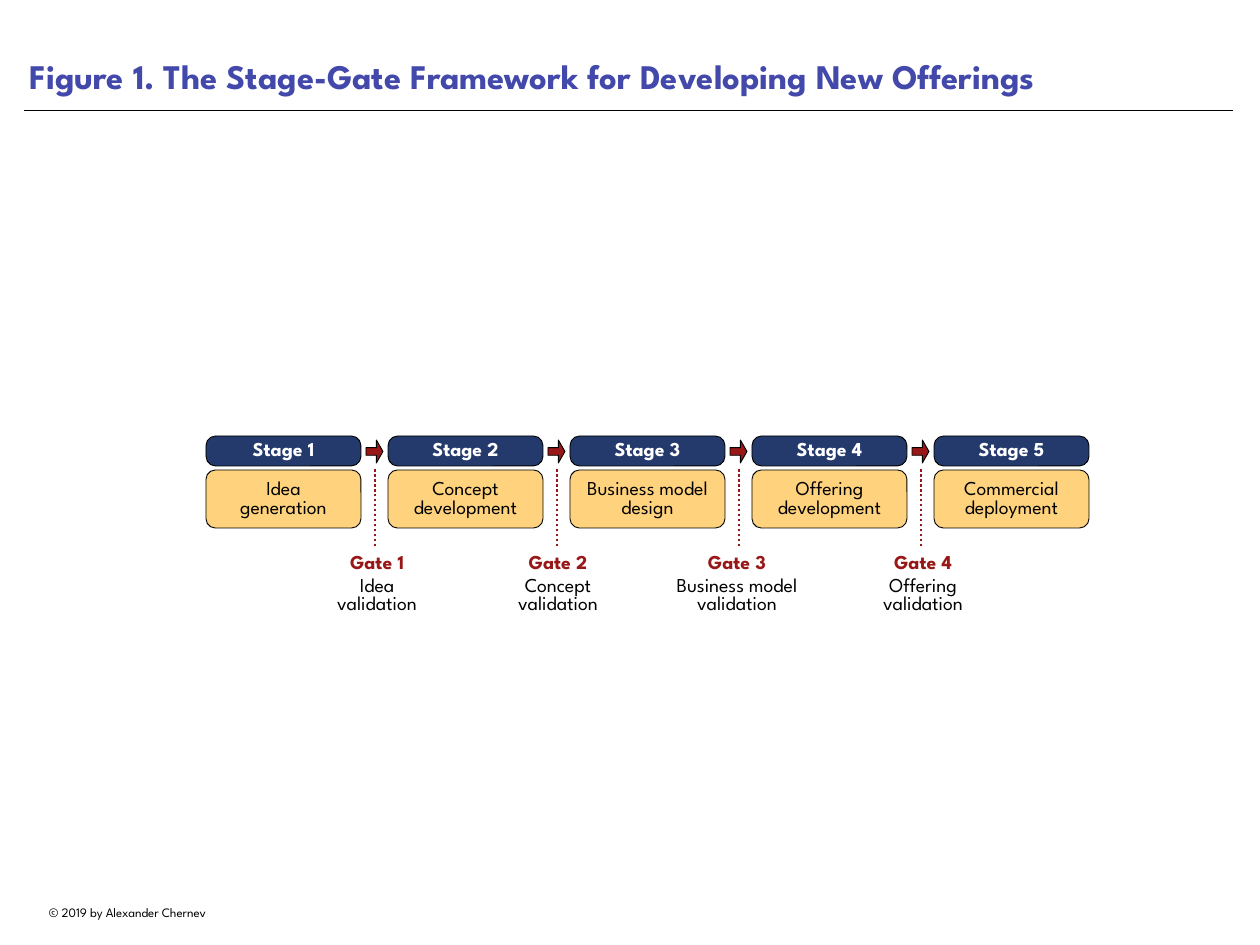
from pptx import Presentation
from pptx.dml.color import RGBColor
from pptx.enum.dml import MSO_LINE
from pptx.enum.shapes import MSO_CONNECTOR, MSO_SHAPE
from pptx.enum.text import MSO_ANCHOR, PP_ALIGN
from pptx.oxml.ns import qn
from pptx.util import Emu, Pt

TITLE = "Figure 1. The Stage-Gate Framework for Developing New Offerings"
CREDIT = "© 2019 by Alexander Chernev"
STAGES = [
    ("Stage 1", "Idea\ngeneration"),
    ("Stage 2", "Concept development"),
    ("Stage 3", "Business model design"),
    ("Stage 4", "Offering development"),
    ("Stage 5", "Commercial deployment"),
]
GATES = [
    ("Gate 1", "Idea validation", 377, 110),
    ("Gate 2", "Concept validation", 558, 110),
    ("Gate 3", "Business model validation", 737, 150),
    ("Gate 4", "Offering validation", 923, 110),
]
COLORS = {
    "title": "4349AA",
    "stage": "253A6C",
    "task": "FFD37D",
    "gate": "971817",
    "black": "000000",
    "white": "FFFFFF",
}
FONT = "League Spartan"
PX = 10320
LEFT, PITCH, STAGE_W = 206, 182, 155


def px(*values):
    return [Emu(v * PX) for v in values]


def color(name):
    return RGBColor.from_string(COLORS[name])


def write(s, lines, size=16, align=PP_ALIGN.CENTER, anchor=MSO_ANCHOR.MIDDLE,
          inset=0, spacing=0.8, wrap=True):
    tf = s.text_frame
    tf.word_wrap = wrap
    tf.vertical_anchor = anchor
    tf.margin_left = tf.margin_right = tf.margin_top = tf.margin_bottom = Emu(inset * PX)
    tf.text = "\n".join(text for text, _, _ in lines)
    styles = [(ink, bold) for text, ink, bold in lines for _ in text.split("\n")]
    for p, (ink, bold) in zip(tf.paragraphs, styles):
        p.alignment = align
        p.line_spacing = spacing
        p.font.name = FONT
        p.font.size = Pt(size)
        p.font.bold = bold
        p.font.color.rgb = color(ink)
    return tf


def add_box(kind, x, y, w, h, fill, *adjustments):
    s = slide.shapes.add_shape(kind, *px(x, y, w, h))
    s.shadow.inherit = False
    s.fill.solid()
    s.fill.fore_color.rgb = color(fill)
    s.line.color.rgb = color("black")
    s.line.width = Pt(0.75)
    for i, value in enumerate(adjustments):
        s.adjustments[i] = value
    return s


def add_line(x1, y1, x2, y2, ink, width):
    s = slide.shapes.add_connector(MSO_CONNECTOR.STRAIGHT, *px(x1, y1, x2, y2))
    s.line.color.rgb = color(ink)
    s.line.width = Pt(width)
    s._element.spPr.append(s._element.makeelement(qn("a:effectLst"), {}))
    return s


prs = Presentation()
prs.slide_width, prs.slide_height = px(1260, 945)
slide = prs.slides.add_slide(prs.slide_layouts[6])

s = slide.shapes.add_textbox(*px(24, 900, 207, 25))
write(s, [(CREDIT, "black", False)], size=10.5, spacing=1, wrap=False)
add_line(24, 110, 1233, 110, "black", 0.5)
s = slide.shapes.add_textbox(*px(24, 0, 1209, 102))
write(s, [(TITLE, "title", True)], size=28, align=PP_ALIGN.LEFT,
      anchor=MSO_ANCHOR.BOTTOM, inset=6, spacing=1)

for i, (stage, task) in enumerate(STAGES):
    x = LEFT + i * PITCH
    s = add_box(MSO_SHAPE.ROUNDED_RECTANGLE, x, 470, STAGE_W, 58, "task", 0.16)
    write(s, [(task, "black", False)])
    s = add_box(MSO_SHAPE.ROUNDED_RECTANGLE, x, 436, STAGE_W, 30, "stage", 0.32)
    write(s, [(stage, "white", True)])

for i, (gate, check, center, width) in enumerate(GATES):
    x = LEFT + i * PITCH
    add_box(MSO_SHAPE.RIGHT_ARROW, x + 160, 440, 17, 23, "gate", 0.33, 0.39)
    s = add_line(x + 169, 546, x + 169, 469, "gate", 2)
    s.line.dash_style = MSO_LINE.ROUND_DOT
    s = slide.shapes.add_textbox(*px(center - width // 2, 549, width, 71))
    tf = write(s, [(gate, "gate", True), (check, "black", False)])
    tf.paragraphs[0].space_after = Pt(3)

prs.save("out.pptx")
